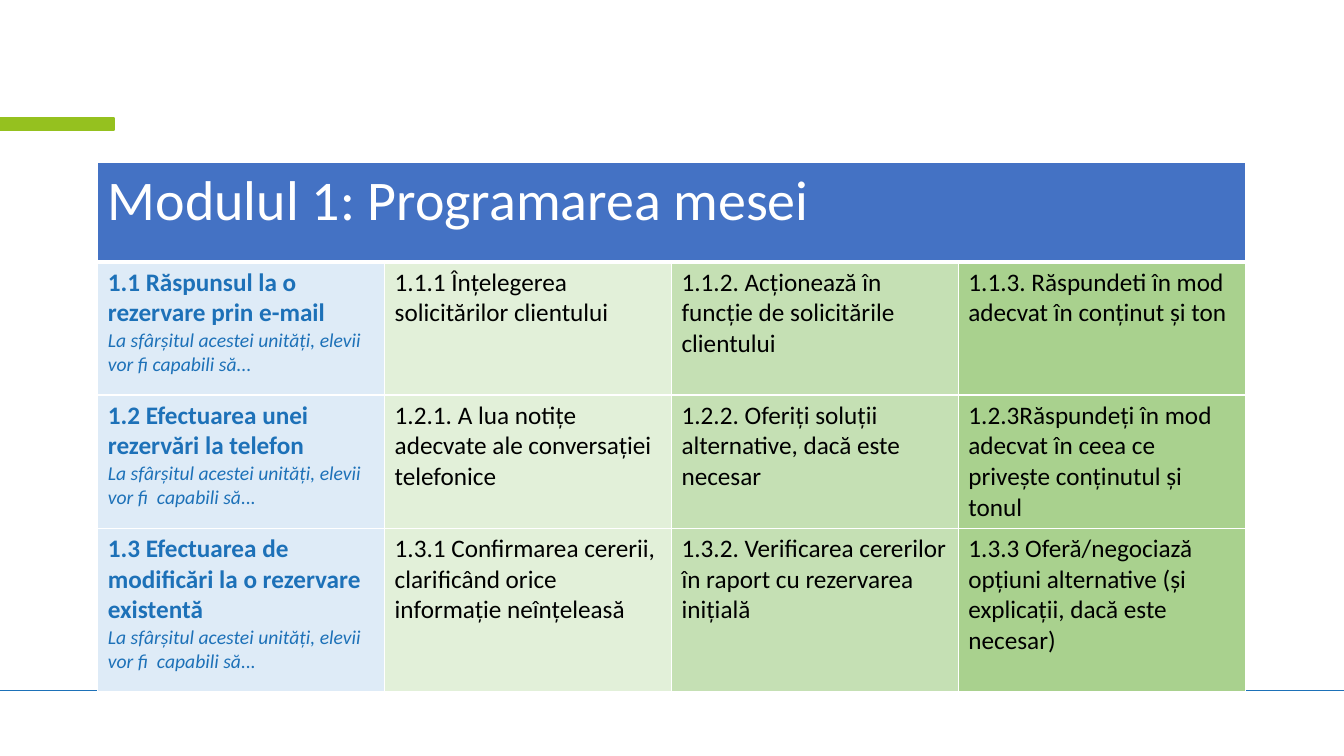
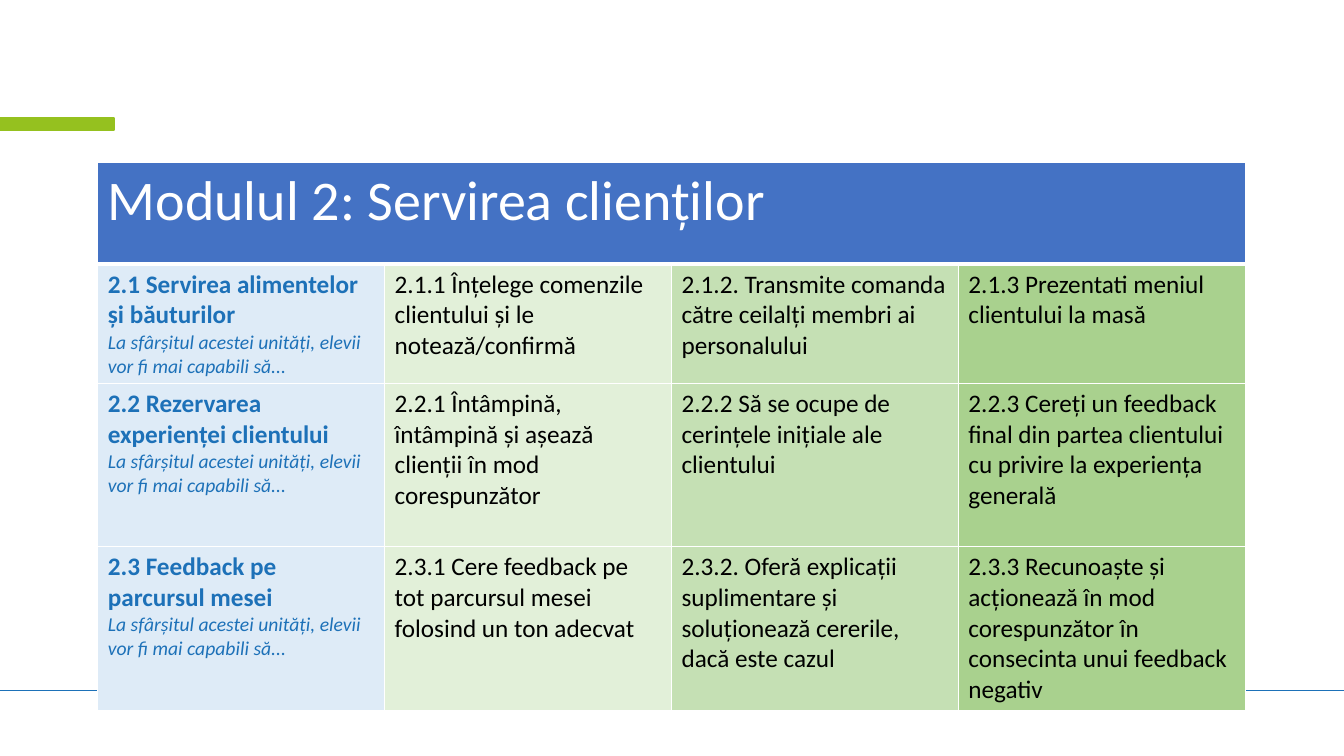
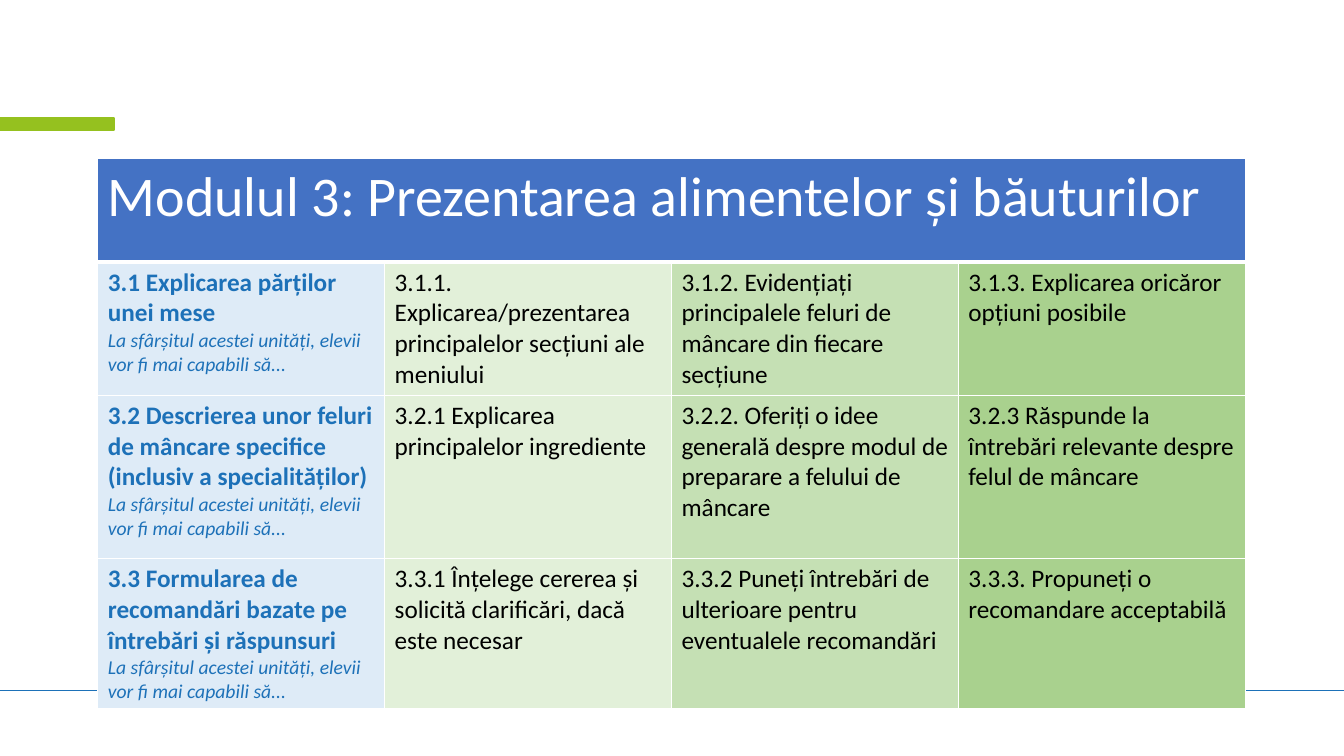
"""Build three slides, each showing the units and skills of one training module."""
from dataclasses import dataclass

from lxml import etree
from pptx import Presentation
from pptx.dml.color import RGBColor
from pptx.enum.shapes import MSO_CONNECTOR, MSO_SHAPE
from pptx.oxml.ns import qn
from pptx.util import Inches, Pt

RECTANGLE = MSO_SHAPE.RECTANGLE
STRAIGHT = MSO_CONNECTOR.STRAIGHT


@dataclass(frozen=True)
class Theme:
    font: str = "Calibri"
    blue: str = "1D71B8"
    green: str = "95C11F"
    header: str = "4472C4"
    white: str = "FFFFFF"
    black: str = "000000"
    columns: tuple = ("DEEBF7", "E2F0D9", "C5E0B4", "A9D18E")
    title_size: int = 40
    body_size: int = 18
    note_size: int = 14
    rule_width: int = 1
    header_rule_width: int = 3


THEME = Theme()
SLIDE_WIDTH = 13.33
FOOTER_TOP = 6.85
TABLE_LEFT = 0.97
TABLE_WIDTH = 11.38
OUTCOME = "La sfârșitul acestei unități, elevii vor fi "

MODULES = [
    ("Modulul 1: Programarea mesei", 1.61, (0.99, 1.32, 1.32, 1.62), [
        ("1.1 Răspunsul la o rezervare prin e-mail",
         "capabili să...",
         "1.1.1 Înțelegerea solicitărilor clientului",
         "1.1.2. Acționează în funcție de solicitările clientului",
         "1.1.3. Răspundeti în mod adecvat în conținut și ton"),
        ("1.2 Efectuarea unei rezervări la telefon",
         " capabili să...",
         "1.2.1. A lua notițe adecvate ale conversației telefonice",
         "1.2.2. Oferiți soluții alternative, dacă este necesar",
         "1.2.3Răspundeți în mod adecvat în ceea ce privește conținutul și tonul"),
        ("1.3 Efectuarea de modificări la o rezervare existentă",
         " capabili să...",
         "1.3.1 Confirmarea cererii, clarificând orice informație neînțeleasă",
         "1.3.2. Verificarea cererilor în raport cu rezervarea inițială",
         "1.3.3 Oferă/negociază opțiuni alternative (și explicații, dacă este necesar)"),
    ]),
    ("Modulul 2: Servirea clienților", 1.61, (1.01, 1.18, 1.62, 1.62), [
        ("2.1 Servirea alimentelor și băuturilor",
         "mai capabili să...",
         "2.1.1 Înțelege comenzile clientului și le notează/confirmă",
         "2.1.2. Transmite comanda către ceilalți membri ai personalului",
         "2.1.3 Prezentati meniul clientului la masă"),
        ("2.2 Rezervarea experienței clientului",
         "mai capabili să...",
         "2.2.1 Întâmpină, întâmpină și așează clienții în mod corespunzător",
         "2.2.2 Să se ocupe de cerințele inițiale ale clientului",
         "2.2.3 Cereți un feedback final din partea clientului cu privire la "
         "experiența generală"),
        ("2.3 Feedback pe parcursul mesei",
         "mai capabili să...",
         "2.3.1 Cere feedback pe tot parcursul mesei folosind un ton adecvat",
         "2.3.2. Oferă explicații suplimentare și soluționează cererile, dacă este cazul",
         "2.3.3 Recunoaște și acționează în mod corespunzător în consecinta unui "
         "feedback negativ"),
    ]),
    ("Modulul 3: Prezentarea alimentelor și băuturilor", 1.57, (1.03, 1.32, 1.62, 1.49), [
        ("3.1 Explicarea părților unei mese",
         "mai capabili să...",
         "3.1.1. Explicarea/prezentarea principalelor secțiuni ale meniului",
         "3.1.2. Evidențiați principalele feluri de mâncare din fiecare secțiune",
         "3.1.3. Explicarea oricăror opțiuni posibile"),
        ("3.2 Descrierea unor feluri de mâncare specifice (inclusiv a specialităților)",
         "mai capabili să...",
         "3.2.1 Explicarea principalelor ingrediente",
         "3.2.2. Oferiți o idee generală despre modul de preparare a felului de mâncare",
         "3.2.3 Răspunde la întrebări relevante despre felul de mâncare"),
        ("3.3 Formularea de recomandări bazate pe întrebări și răspunsuri",
         "mai capabili să...",
         "3.3.1 Înțelege cererea și solicită clarificări, dacă este necesar",
         "3.3.2 Puneți întrebări de ulterioare pentru eventualele recomandări",
         "3.3.3. Propuneți o recomandare acceptabilă"),
    ]),
]


def style_cell(cell, fill, bottom_width=THEME.rule_width):
    """Give a cell white borders and a solid fill."""
    properties = cell._tc.get_or_add_tcPr()
    for side in ("L", "R", "T", "B"):
        width = bottom_width if side == "B" else THEME.rule_width
        border = etree.SubElement(properties, qn(f"a:ln{side}"), w=str(Pt(width)))
        solid = etree.SubElement(border, qn("a:solidFill"))
        etree.SubElement(solid, qn("a:srgbClr"), val=THEME.white)
    cell.fill.solid()
    cell.fill.fore_color.rgb = RGBColor.from_string(fill)


def write_para(para, text, size, color, bold=False, italic=False):
    """Write one paragraph in the theme font."""
    para.text = text
    para.font.name = THEME.font
    para.font.size = Pt(size)
    para.font.color.rgb = RGBColor.from_string(color)
    para.font.bold = bold
    para.font.italic = italic


deck = Presentation()
deck.slide_width = Inches(SLIDE_WIDTH)
deck.slide_height = Inches(7.5)

for title, table_top, row_heights, units in MODULES:
    page = deck.slides.add_slide(deck.slide_layouts[6])

    footer_line = page.shapes.add_connector(
        STRAIGHT, 0, Inches(FOOTER_TOP), Inches(SLIDE_WIDTH), Inches(FOOTER_TOP))
    footer_line.line.color.rgb = RGBColor.from_string(THEME.blue)
    footer_line.line.width = Pt(THEME.rule_width)
    etree.SubElement(footer_line._element.spPr, qn("a:effectLst"))

    accent = page.shapes.add_shape(RECTANGLE, 0, Inches(1.17), Inches(1.13), Inches(0.12))
    accent.shadow.inherit = False
    accent.fill.solid()
    accent.fill.fore_color.rgb = RGBColor.from_string(THEME.green)
    accent.line.color.rgb = RGBColor.from_string(THEME.green)
    accent.line.width = Pt(THEME.rule_width)

    table = page.shapes.add_table(
        len(row_heights), len(THEME.columns), Inches(TABLE_LEFT), Inches(table_top),
        Inches(TABLE_WIDTH), Inches(sum(row_heights))).table
    table.first_row = False
    table.horz_banding = False
    for row, height in zip(table.rows, row_heights):
        row.height = Inches(height)

    header = table.cell(0, 0)
    header.merge(table.cell(0, len(THEME.columns) - 1))
    for cell in table.rows[0].cells:
        style_cell(cell, THEME.header, THEME.header_rule_width)
    write_para(header.text_frame.paragraphs[0], title, THEME.title_size, THEME.white)

    for row_index, (unit, outcome_end, *skills) in enumerate(units, start=1):
        for column, (text, fill) in enumerate(zip((unit, *skills), THEME.columns)):
            cell = table.cell(row_index, column)
            style_cell(cell, fill)
            is_unit = column == 0
            write_para(cell.text_frame.paragraphs[0], text, THEME.body_size,
                       THEME.blue if is_unit else THEME.black, bold=is_unit)
            if is_unit:
                write_para(cell.text_frame.add_paragraph(), OUTCOME + outcome_end,
                           THEME.note_size, THEME.blue, italic=True)

deck.save("out.pptx")
